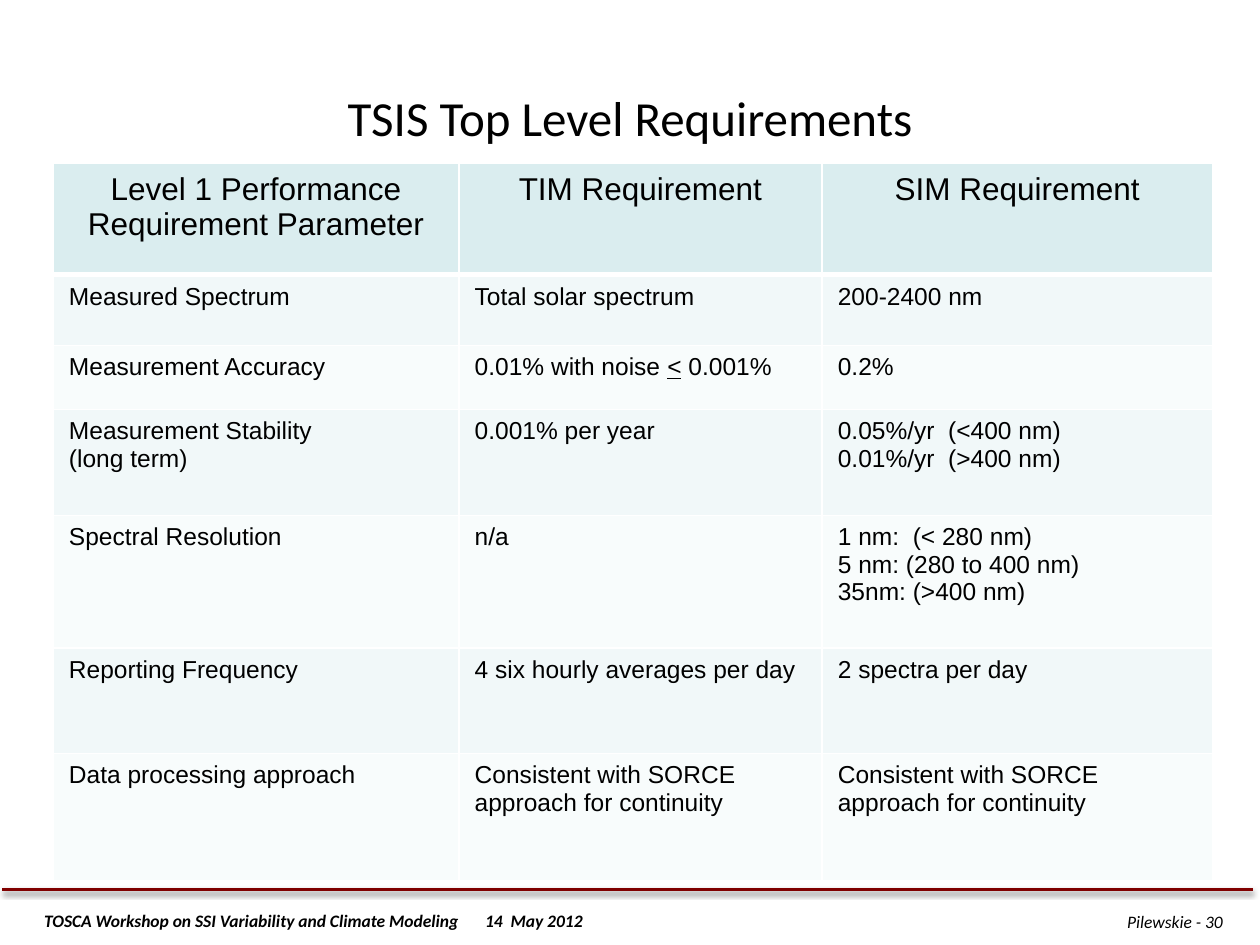
import pptx
import pptx.dml.color
import pptx.enum.shapes
import pptx.enum.text
import pptx.oxml
import pptx.oxml.ns
from dataclasses import dataclass
from pptx.util import Cm

ALIGN = pptx.enum.text.PP_ALIGN
ANCHOR = pptx.enum.text.MSO_ANCHOR


@dataclass(frozen=True)
class Theme:
    heading_font: str = "Calibri"
    table_font: str = "Arial"
    ink: str = "000000"
    rule: str = "800000"
    border: str = "FFFFFF"
    header_fill: str = "DAEDEF"
    band_fills: tuple = ("F1F8F9", "F8FCFC")
    title_size: int = 28
    header_size: int = 18
    body_size: int = 14
    footer_size: int = 10


THEME = Theme()

# Line breaks separate paragraphs; a pair of underscores underlines text.
REQUIREMENTS = [
    ("Level 1 Performance Requirement Parameter", "TIM Requirement", "SIM Requirement"),
    ("Measured Spectrum", "Total solar spectrum", "200-2400 nm"),
    ("Measurement Accuracy", "0.01% with noise _<_ 0.001%", "0.2%"),
    ("Measurement Stability\n(long term)", "0.001% per year",
     "0.05%/yr  (<400 nm)\n0.01%/yr  (>400 nm)"),
    ("Spectral Resolution", "n/a",
     "1 nm:  (< 280 nm)\n5 nm: (280 to 400 nm)\n35nm: (>400 nm)"),
    ("Reporting Frequency", "4 six hourly averages per day", "2 spectra per day"),
    ("Data processing approach",) + ("Consistent with SORCE approach for continuity",) * 2,
]
COLUMN_WIDTHS = (8.18, 7.32, 7.87)
ROW_HEIGHTS = (2.24, 1.42, 1.3, 2.13, 2.67, 2.13, 2.57)


def color(value):
    return pptx.dml.color.RGBColor.from_string(value)


def write_text(frame, text, *, font, size, align=ALIGN.LEFT, bold=False, italic=False):
    for index, line in enumerate(text.split("\n")):
        para = frame.add_paragraph() if index else frame.paragraphs[0]
        para.alignment = align
        for part, words in enumerate(line.split("_")):
            span = para.add_run()
            span.text = words
            span.font.name = font
            span.font.size = pptx.util.Pt(size)
            span.font.bold = bold
            span.font.italic = italic
            span.font.underline = part % 2 == 1
            span.font.color.rgb = color(THEME.ink)


def add_text(page, text, left, top, width, height, **text_format):
    box = page.shapes.add_textbox(Cm(left), Cm(top), Cm(width), Cm(height))
    box.text_frame.word_wrap = True
    box.text_frame.vertical_anchor = ANCHOR.MIDDLE
    write_text(box.text_frame, text, **text_format)


def add_footer_rule(page):
    line = page.shapes.add_connector(
        pptx.enum.shapes.MSO_CONNECTOR.STRAIGHT, Cm(0.05), Cm(17.93), Cm(25.25), Cm(17.93))
    line.line.color.rgb = color(THEME.rule)
    line.line.width = pptx.util.Pt(2)
    # Soft shadow straight below the rule
    line._element.spPr.append(pptx.oxml.parse_xml(
        f'<a:effectLst {pptx.oxml.ns.nsdecls("a")}>'
        '<a:outerShdw blurRad="39370" dist="20320" dir="5400000" rotWithShape="0">'
        f'<a:srgbClr val="{THEME.ink}"><a:alpha val="38000"/></a:srgbClr>'
        '</a:outerShdw></a:effectLst>'))


def set_borders(cell, bottom):
    properties = cell._tc.get_or_add_tcPr()
    for side, points in (("L", 1), ("R", 1), ("T", 1), ("B", bottom)):
        properties.append(pptx.oxml.parse_xml(
            f'<a:ln{side} {pptx.oxml.ns.nsdecls("a")} w="{pptx.util.Pt(points)}">'
            f'<a:solidFill><a:srgbClr val="{THEME.border}"/></a:solidFill></a:ln{side}>'))


def add_requirements_table(page):
    table = page.shapes.add_table(
        len(REQUIREMENTS), len(COLUMN_WIDTHS), Cm(1.07), Cm(3.3),
        Cm(sum(COLUMN_WIDTHS)), Cm(sum(ROW_HEIGHTS))).table
    for column, width in zip(table.columns, COLUMN_WIDTHS):
        column.width = Cm(width)
    for row_index, (row, height) in enumerate(zip(table.rows, ROW_HEIGHTS)):
        row.height = Cm(height)
        header = row_index == 0
        fill = THEME.header_fill if header else THEME.band_fills[(row_index - 1) % 2]
        for cell, text in zip(row.cells, REQUIREMENTS[row_index]):
            set_borders(cell, bottom=3 if header else 1)
            cell.fill.solid()
            cell.fill.fore_color.rgb = color(fill)
            cell.margin_left = cell.margin_right = Cm(0.32)
            cell.margin_top = cell.margin_bottom = Cm(0.16)
            write_text(cell.text_frame, text, font=THEME.table_font,
                       size=THEME.header_size if header else THEME.body_size,
                       align=ALIGN.CENTER if header else ALIGN.LEFT)


def main():
    deck = pptx.Presentation()
    deck.slide_width, deck.slide_height = Cm(25.4), Cm(19.05)
    page = deck.slides.add_slide(deck.slide_layouts[6])

    # Footer
    footer = dict(font=THEME.heading_font, size=THEME.footer_size, italic=True)
    add_text(page, "TOSCA Workshop on SSI Variability and Climate Modeling\t14  May 2012",
             0.64, 18.21, 20.75, 0.69, bold=True, **footer)
    add_text(page, "Pilewskie - 30", 18.85, 18.24, 6.05, 0.66, align=ALIGN.RIGHT, **footer)
    add_footer_rule(page)

    # Title and table
    add_text(page, "TSIS Top Level Requirements", 1.27, 0.76, 22.86, 3.18,
             font=THEME.heading_font, size=THEME.title_size, align=ALIGN.CENTER)
    add_requirements_table(page)

    deck.save("out.pptx")


if __name__ == "__main__":
    main()
